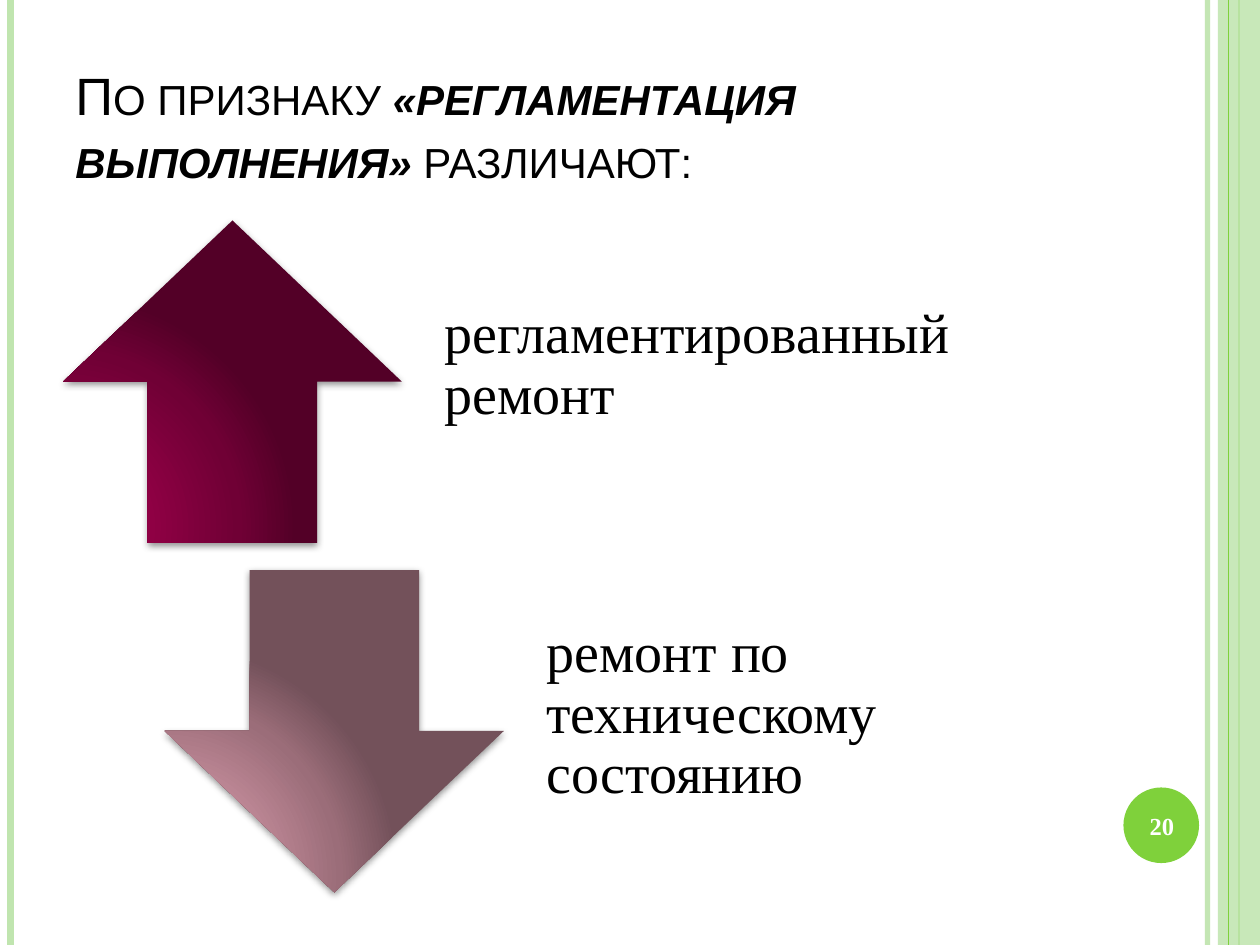
from lxml import etree
from pptx import Presentation, util as u
from pptx.dml.color import RGBColor
from pptx.enum import shapes, text
from pptx.oxml import ns

GREEN = RGBColor(0x7F, 0xD1, 0x3B)
PALE = RGBColor(0xC0, 0xE5, 0xAF)
BLACK = RGBColor(0, 0, 0)
WHITE = RGBColor(255, 255, 255)
WINE = [RGBColor.from_string(c) for c in ("9A0049", "950047", "700035", "530027")]
ROSE = [RGBColor.from_string(c) for c in ("D599A8", "CD93A2", "9B6D79", "73515A")]
STOPS = (0, 30, 75, 100)
FOCUS = {"l": 5, "t": 100, "r": 120, "b": 10}
SANS = "Arial"
SERIF = "Times New Roman"
SHAPE = shapes.MSO_SHAPE
ANCHOR = text.MSO_ANCHOR


def sub(node, tag, **attrs):
    values = {key: str(value) for key, value in attrs.items()}
    return etree.SubElement(node, ns.qn("a:" + tag), values)


class Page:
    def __init__(self, deck):
        self.slide = deck.slides.add_slide(deck.slide_layouts[6])
        self.items = self.slide.shapes

    def fade(self, props, alpha):
        color = next(props.iter(ns.qn("a:srgbClr")))
        sub(color, "alpha", val=alpha * 1000)

    def rule(self, left, color, width, alpha=100):
        line = self.items.add_connector(
            shapes.MSO_CONNECTOR.STRAIGHT, u.Pt(left), 0, u.Pt(left), u.Pt(540))
        line.line.color.rgb = color
        line.line.width = u.Pt(width)
        props = line._element.spPr
        if alpha < 100:
            self.fade(props, alpha)
        sub(props, "effectLst")

    def shape(self, kind, box):
        item = self.items.add_shape(kind, *map(u.Pt, box))
        item.shadow.inherit = False
        item.line.fill.background()
        return item

    def solid(self, kind, box, color, alpha=100):
        item = self.shape(kind, box)
        item.fill.solid()
        item.fill.fore_color.rgb = color
        if alpha < 100:
            self.fade(item._element.spPr, alpha)

    def arrow(self, kind, box, colors):
        item = self.shape(kind, box)
        item.fill.gradient()
        props = item._element.spPr
        grad = props.find(ns.qn("a:gradFill"))
        for child in list(grad):
            grad.remove(child)
        stops = sub(grad, "gsLst")
        for pos, color in zip(STOPS, colors):
            sub(sub(stops, "gs", pos=pos * 1000), "srgbClr", val=color)
        focus = {side: part * 1000 for side, part in FOCUS.items()}
        sub(sub(grad, "path", path="circle"), "fillToRect", **focus)
        shade = sub(props.find(ns.qn("a:effectLst")), "outerShdw",
                    blurRad=u.Pt(4), dist=u.Pt(1.6), dir=90 * 60000,
                    algn="ctr", rotWithShape=0)
        sub(sub(shade, "srgbClr", val=BLACK), "alpha", val=42000)

    def label(self, box, runs, font, size, color=BLACK, anchor=ANCHOR.MIDDLE,
              inset=(7.2, 3.6, 7.2, 3.6), align=text.PP_ALIGN.LEFT,
              space=1.0, bold=None, caps=False):
        frame = self.items.add_textbox(*map(u.Pt, box)).text_frame
        frame.word_wrap = True
        frame.vertical_anchor = anchor
        (frame.margin_left, frame.margin_top,
         frame.margin_right, frame.margin_bottom) = map(u.Pt, inset)
        para = frame.paragraphs[0]
        para.alignment = align
        para.line_spacing = space
        para.font.name = font
        para.font.size = u.Pt(size)
        para.font.color.rgb = color
        para.font.bold = bold
        for words, strong in runs:
            run = para.add_run()
            run.text = words
            if strong:
                run.font.bold = run.font.italic = True
            if caps:
                run._r.get_or_add_rPr().set("cap", "small")


def main():
    deck = Presentation()
    deck.slide_width, deck.slide_height = u.Pt(720), u.Pt(540)
    page = Page(deck)

    page.rule(690, PALE, 3, 93)
    page.rule(6, PALE, 4.5)
    page.rule(708, GREEN, 1.5)
    page.solid(SHAPE.RECTANGLE, (696, 0, 24, 540), PALE, 87)
    page.rule(702, GREEN, 0.75)
    page.solid(SHAPE.OVAL, (642, 450, 43.2, 43.2), GREEN)

    title = [("По признаку ", False),
             ("«регламентация выполнения» ", True),
             ("различают:", False)]
    page.label((36, 21.6, 588, 90), title, SANS, 30,
               anchor=ANCHOR.BOTTOM, caps=True)

    wide, high = 193.7, 184.3
    rows = [(SHAPE.UP_ARROW, 36, 126, WINE, "регламентированный ремонт"),
            (SHAPE.DOWN_ARROW, 94.2, 325.6, ROSE,
             "ремонт по техническому состоянию")]
    for kind, left, top, colors, words in rows:
        page.arrow(kind, (left, top, wide, high), colors)
        page.label((left + 200, top, 329, high), [(words, False)], SERIF, 32,
                   inset=(18, 0, 18, 18), space=0.9)

    page.label((640, 451.4, 48, 41), [("20", False)], SERIF, 14, WHITE,
               align=text.PP_ALIGN.CENTER, bold=True)
    deck.save("out.pptx")


if __name__ == "__main__":
    main()
